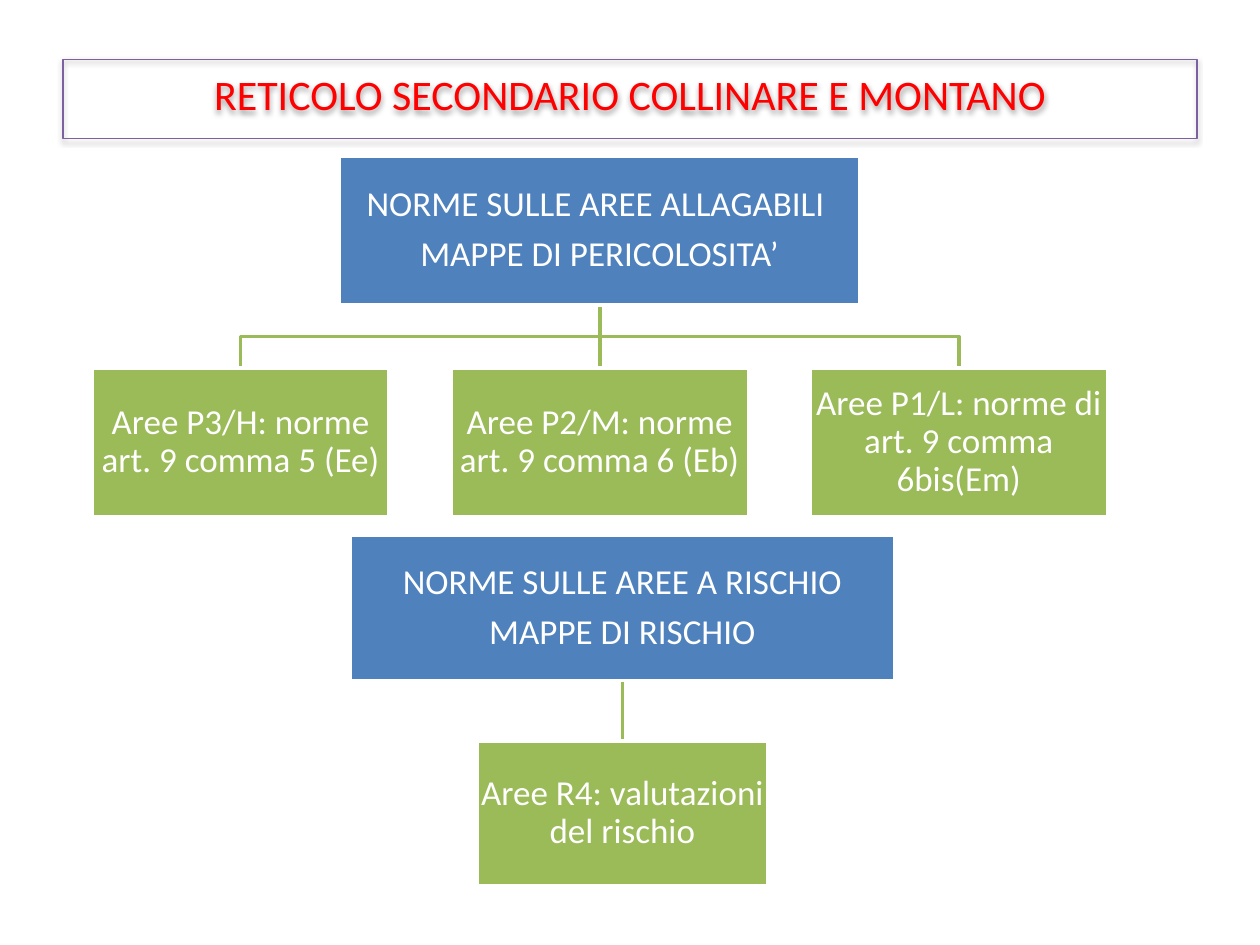
from lxml import etree
from pptx import Presentation, util as u
from pptx.dml.color import RGBColor
from pptx.enum import shapes, text
from pptx.oxml.ns import qn

WIDTH, HEIGHT = 10, 7.5
FONT = "Calibri"
RED = RGBColor(0xFF, 0x00, 0x00)
WHITE = RGBColor(0xFF, 0xFF, 0xFF)
BLUE = RGBColor(0x4F, 0x81, 0xBD)
GREEN = RGBColor(0x9B, 0xBB, 0x59)
PURPLE = RGBColor(0x7D, 0x60, 0xA0)


def add_line(para, words, size, color):
    """Write one centred run into a paragraph."""
    para.alignment = text.PP_ALIGN.CENTER
    span = para.add_run()
    span.text = words
    span.font.name = FONT
    span.font.size = u.Pt(size)
    span.font.color.rgb = color


def add_rect(page, left, top, width, height, line_color, line_width):
    box = page.shapes.add_shape(
        shapes.MSO_SHAPE.RECTANGLE,
        u.Inches(left), u.Inches(top), u.Inches(width), u.Inches(height))
    box.shadow.inherit = False
    box.line.color.rgb = line_color
    box.line.width = u.Pt(line_width)
    box.text_frame.word_wrap = True
    return box


def add_title(page, words):
    """Outlined box whose soft shadow also falls behind its text."""
    margin = WIDTH * 0.05
    box = add_rect(page, margin, 0.47, WIDTH - 2 * margin, 0.63, PURPLE, 0.75)
    box.fill.background()
    effects = box._element.spPr.find(qn("a:effectLst"))
    shadow = etree.SubElement(
        effects, qn("a:outerShdw"), blurRad=str(u.Pt(3.1)),
        dist=str(u.Pt(1.6)), dir="5400000", rotWithShape="0")
    color = etree.SubElement(shadow, qn("a:srgbClr"), val="000000")
    etree.SubElement(color, qn("a:alpha"), val="38000")
    frame = box.text_frame
    frame.vertical_anchor = text.MSO_ANCHOR.TOP
    frame.margin_top = u.Inches(0.07)
    add_line(frame.paragraphs[0], words, 24, RED)


def add_node(page, center, top, width, height, fill, lines):
    box = add_rect(page, center - width / 2, top, width, height, WHITE, 2)
    box.fill.solid()
    box.fill.fore_color.rgb = fill
    frame = box.text_frame
    frame.vertical_anchor = text.MSO_ANCHOR.MIDDLE
    frame.margin_left = frame.margin_right = u.Inches(0.01)
    frame.margin_top = frame.margin_bottom = u.Inches(0.01)
    for index, words in enumerate(lines):
        para = frame.add_paragraph() if index else frame.paragraphs[0]
        para.line_spacing = 0.9
        para.space_after = u.Pt(7)
        add_line(para, words, 20, WHITE)


def add_branch(page, start, end, top, bottom):
    """Join a parent to a child: straight below it, stepped to the side."""
    if start == end:
        branch = page.shapes.add_connector(
            shapes.MSO_CONNECTOR.STRAIGHT,
            u.Inches(start), u.Inches(top), u.Inches(end), u.Inches(bottom))
        etree.SubElement(branch._element.spPr, qn("a:effectLst"))
    else:
        middle = (top + bottom) / 2
        points = [(start, middle), (end, middle), (end, bottom)]
        builder = page.shapes.build_freeform(
            u.Inches(start), u.Inches(top), scale=1.0)
        builder.add_line_segments(
            [(u.Inches(x), u.Inches(y)) for x, y in points], close=False)
        branch = builder.convert_to_shape()
        branch.shadow.inherit = False
        branch.fill.background()
    branch.line.color.rgb = GREEN
    branch.line.width = u.Pt(2)


def add_tree(page, center, top, root_width, child_width, height, gap, pitch,
             root_lines, children):
    """Root box over an evenly spaced row of child boxes."""
    root_bottom = top + height
    child_top = root_bottom + gap
    centers = [center + (index - (len(children) - 1) / 2) * pitch
               for index in range(len(children))]
    for child_center in centers:
        add_branch(page, center, child_center, root_bottom, child_top)
    add_node(page, center, top, root_width, height, BLUE, root_lines)
    for child_center, words in zip(centers, children):
        add_node(page, child_center, child_top, child_width, height, GREEN,
                 [words])


def main():
    deck = Presentation()
    deck.slide_width, deck.slide_height = u.Inches(WIDTH), u.Inches(HEIGHT)
    page = deck.slides.add_slide(deck.slide_layouts[6])

    add_title(page, "RETICOLO SECONDARIO COLLINARE E MONTANO")

    # Hazard maps
    add_tree(page, center=4.76, top=1.24, root_width=4.13, child_width=2.36,
             height=1.18, gap=0.5, pitch=2.85,
             root_lines=["NORME SULLE AREE ALLAGABILI ",
                         "MAPPE DI PERICOLOSITA’"],
             children=["Aree P3/H: norme art. 9 comma 5 (Ee)",
                       "Aree P2/M: norme art. 9 comma 6 (Eb)",
                       "Aree P1/L: norme di art. 9 comma 6bis(Em)"])

    # Risk maps
    add_tree(page, center=4.94, top=4.25, root_width=4.32, child_width=2.3,
             height=1.15, gap=0.48, pitch=0,
             root_lines=["NORME SULLE AREE A RISCHIO", "MAPPE DI RISCHIO"],
             children=["Aree R4: valutazioni del rischio"])

    deck.save("out.pptx")


if __name__ == "__main__":
    main()
